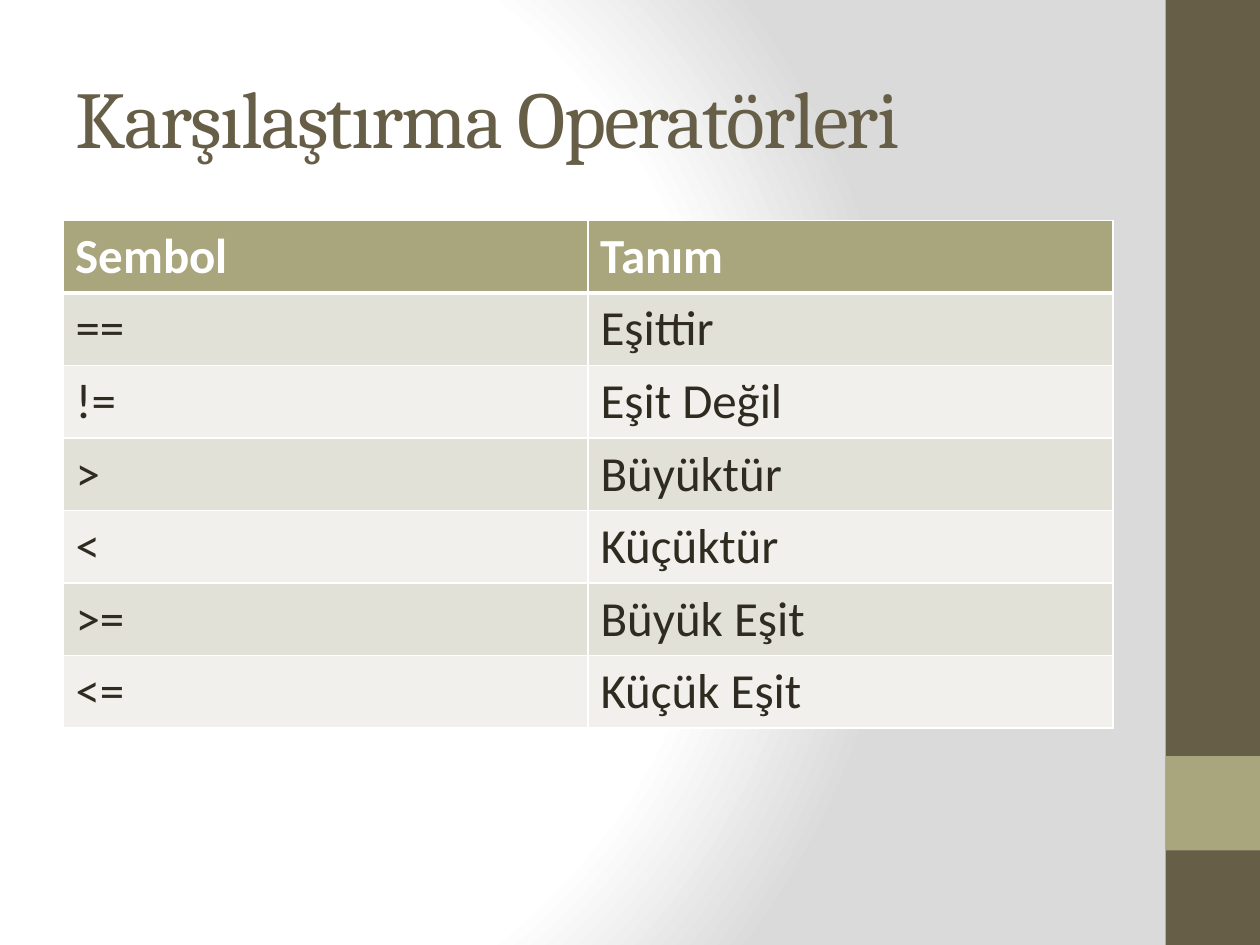
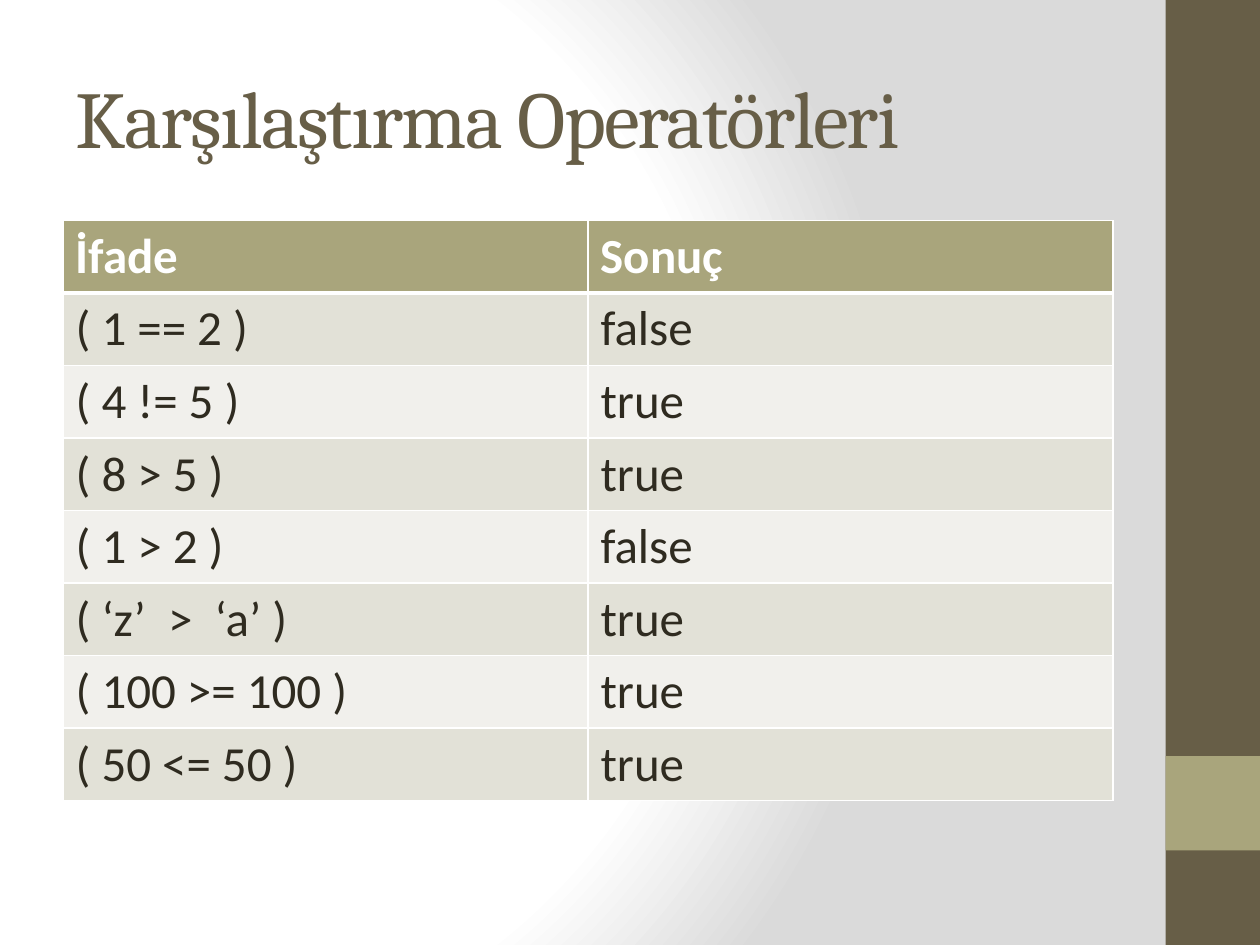
from dataclasses import dataclass

from lxml import etree
from pptx import Presentation
from pptx.dml.color import RGBColor
from pptx.enum.shapes import MSO_SHAPE
from pptx.enum.text import MSO_ANCHOR, MSO_AUTO_SIZE, PP_ALIGN
from pptx.oxml import parse_xml
from pptx.oxml.ns import nsdecls, qn
from pptx.util import Pt

RECTANGLE = MSO_SHAPE.RECTANGLE
MIDDLE = MSO_ANCHOR.MIDDLE
NO_AUTOFIT = MSO_AUTO_SIZE.NONE
LEFT = PP_ALIGN.LEFT

BROWN, OLIVE, INK = "675E47", "A9A57C", "2F2B20"
WHITE, GREY = "FFFFFF", "DADADA"
ROW_FILLS = ("E2E1D7", "F1F0EC")

TITLE_ONLY_LAYOUT = 5
TITLE_FORMAT = {"name": "Cambria", "size": Pt(46), "bold": False}
HEADER_FORMAT = {"name": "Calibri", "size": Pt(28), "bold": True}
BODY_FORMAT = {"name": "Calibri", "size": Pt(28), "bold": False}
THIN, THICK = 1, 3
ROW_HEIGHT = 41.4


@dataclass(frozen=True)
class Box:
    left: float
    top: float
    width: float
    height: float

    def lengths(self) -> tuple:
        return Pt(self.left), Pt(self.top), Pt(self.width), Pt(self.height)


@dataclass(frozen=True)
class Band:
    box: Box
    fill: str


@dataclass(frozen=True)
class TablePage:
    title: str
    rows: tuple


TITLE_BOX = Box(36, 21.6, 600, 90)
TABLE_LEFT, TABLE_TOP, TABLE_WIDTH = 36, 126, 600
BANDS = (
    Band(Box(666, 0, 54, 540), BROWN),
    Band(Box(666, 432, 54, 54), OLIVE),
)

PAGES = (
    TablePage("Karşılaştırma Operatörleri", (
        ("Sembol", "Tanım"),
        ("==", "Eşittir"),
        ("!=", "Eşit Değil"),
        (">", "Büyüktür"),
        ("<", "Küçüktür"),
        (">=", "Büyük Eşit"),
        ("<=", "Küçük Eşit"),
    )),
    TablePage("Karşılaştırma Operatörleri", (
        ("İfade", "Sonuç"),
        ("( 1 == 2 )", "false"),
        ("( 4 != 5 )", "true"),
        ("( 8 > 5 )", "true"),
        ("( 1 > 2 )", "false"),
        ("( ‘z’  >  ‘a’ )", "true"),
        ("( 100 >= 100 )", "true"),
        ("( 50 <= 50 )", "true"),
    )),
)


def color(value: str) -> RGBColor:
    return RGBColor.from_string(value)


def set_background(master) -> None:
    """Give every page a white-to-grey radial gradient."""
    master.background.fill.gradient()
    stops = "".join(
        f'<a:gs pos="{position * 1000}"><a:srgbClr val="{shade}"/></a:gs>'
        for position, shade in ((0, WHITE), (75, WHITE), (100, GREY))
    )
    gradient = parse_xml(
        f'<a:gradFill {nsdecls("a")} rotWithShape="1"><a:gsLst>{stops}</a:gsLst>'
        '<a:path path="circle">'
        '<a:fillToRect l="20000" t="50000" r="100000" b="50000"/>'
        '</a:path></a:gradFill>'
    )
    properties = master.element.find(".//" + qn("p:bgPr"))
    properties.replace(properties.find(qn("a:gradFill")), gradient)


def write(frame, text: str, text_format: dict, text_color: str):
    para = frame.paragraphs[0]
    para.alignment = LEFT
    span = para.add_run()
    span.text = text
    for name, value in text_format.items():
        setattr(span.font, name, value)
    span.font.color.rgb = color(text_color)
    return span


def add_band(page, band: Band) -> None:
    shape = page.shapes.add_shape(RECTANGLE, *band.box.lengths())
    shape.shadow.inherit = False
    shape.fill.solid()
    shape.fill.fore_color.rgb = color(band.fill)
    shape.line.fill.background()


def set_title(page, text: str) -> None:
    title = page.shapes.title
    title.left, title.top, title.width, title.height = TITLE_BOX.lengths()
    frame = title.text_frame
    frame.word_wrap = True
    frame.auto_size = NO_AUTOFIT
    frame.vertical_anchor = MIDDLE
    span = write(frame, text, TITLE_FORMAT, BROWN)
    span.font._element.set("spc", "-100")


def set_borders(cell, top: float, bottom: float) -> None:
    properties = cell._tc.get_or_add_tcPr()
    widths = {"lnL": THIN, "lnR": THIN, "lnT": top, "lnB": bottom}
    for side, width in widths.items():
        line = etree.SubElement(properties, qn(f"a:{side}"), w=str(Pt(width)))
        fill = etree.SubElement(line, qn("a:solidFill"))
        etree.SubElement(fill, qn("a:srgbClr"), val=WHITE)


def add_table(page, rows: tuple) -> None:
    box = Box(TABLE_LEFT, TABLE_TOP, TABLE_WIDTH, ROW_HEIGHT * len(rows))
    table = page.shapes.add_table(len(rows), len(rows[0]), *box.lengths()).table
    table.first_row = table.horz_banding = False
    for row_index, texts in enumerate(rows):
        table.rows[row_index].height = Pt(ROW_HEIGHT)
        is_header = row_index == 0
        row_fill = OLIVE if is_header else ROW_FILLS[(row_index - 1) % 2]
        for column_index, text in enumerate(texts):
            cell = table.cell(row_index, column_index)
            set_borders(cell, THICK if row_index == 1 else THIN,
                        THICK if is_header else THIN)
            cell.fill.solid()
            cell.fill.fore_color.rgb = color(row_fill)
            write(cell.text_frame, text,
                  HEADER_FORMAT if is_header else BODY_FORMAT,
                  WHITE if is_header else INK)


def main() -> None:
    deck = Presentation()
    deck.slide_width, deck.slide_height = Pt(720), Pt(540)
    set_background(deck.slide_master)
    for content in PAGES:
        page = deck.slides.add_slide(deck.slide_layouts[TITLE_ONLY_LAYOUT])
        for band in BANDS:
            add_band(page, band)
        set_title(page, content.title)
        add_table(page, content.rows)
    deck.save("out.pptx")


if __name__ == "__main__":
    main()
